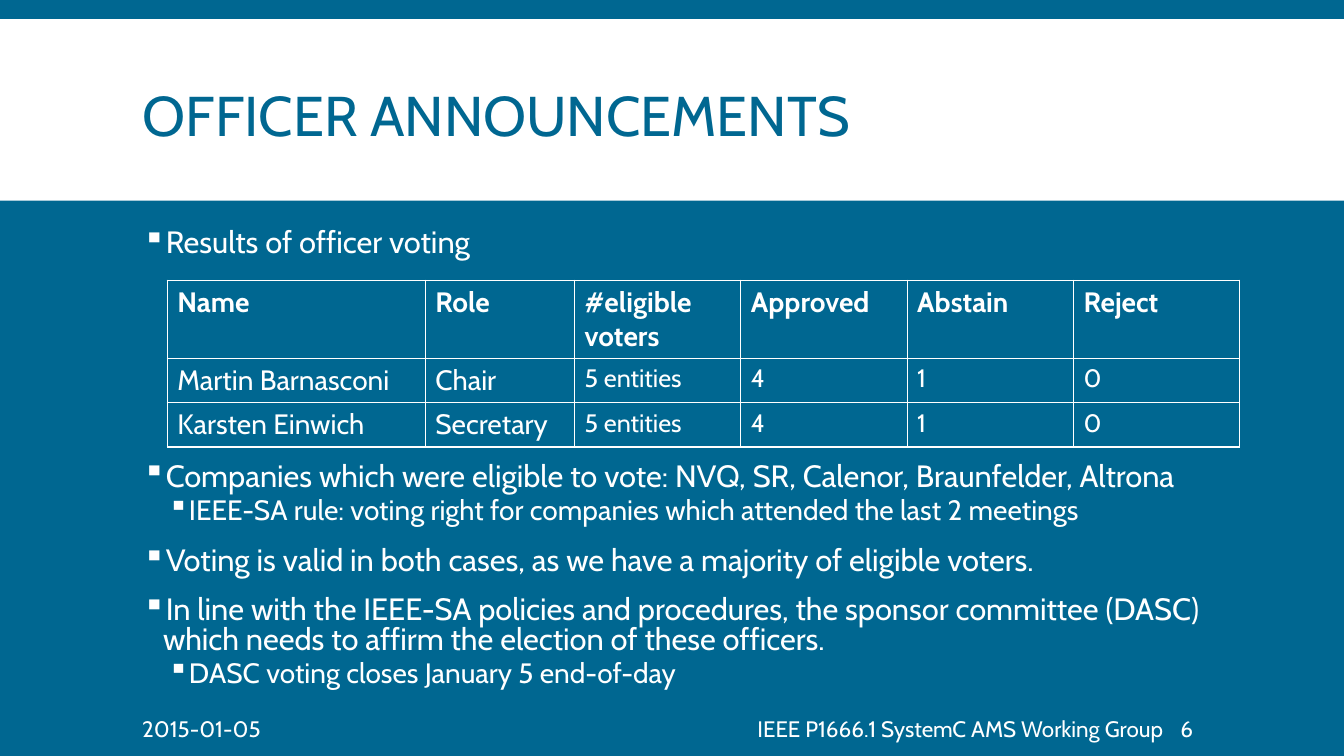
from lxml import etree
from pptx import Presentation
from pptx.dml.color import RGBColor
from pptx.enum.shapes import MSO_SHAPE as Shape
from pptx.enum.text import MSO_ANCHOR as Anchor, PP_ALIGN as Align
from pptx.oxml.ns import qn
from pptx.util import Pt

BLUE, WHITE = "006791", "FFFFFF"


def color(value):
    return RGBColor.from_string(value)


class SlideBuilder:
    font = "Cabin"

    def __init__(self, presentation):
        self.slide = presentation.slides.add_slide(presentation.slide_layouts[6])

    def background(self, fill):
        self.slide.background.fill.solid()
        self.slide.background.fill.fore_color.rgb = color(fill)

    def band(self, left, top, width, height, fill):
        shape = self.slide.shapes.add_shape(
            Shape.RECTANGLE, Pt(left), Pt(top), Pt(width), Pt(height))
        shape.shadow.inherit = False
        shape.fill.solid()
        shape.fill.fore_color.rgb = color(fill)
        shape.line.fill.background()

    def run(self, paragraph, text, size, fill=WHITE, bold=False):
        run = paragraph.add_run()
        run.text = text
        run.font.name = self.font
        run.font.size = Pt(size)
        run.font.bold = bold
        run.font.color.rgb = color(fill)

    def frame(self, left, top, width, height, anchor):
        box = self.slide.shapes.add_textbox(Pt(left), Pt(top), Pt(width), Pt(height))
        frame = box.text_frame
        frame.word_wrap = True
        frame.vertical_anchor = anchor
        return frame

    def label(self, left, top, width, height, text, size, fill=WHITE,
              align=Align.LEFT, margin=7.2):
        frame = self.frame(left, top, width, height, Anchor.MIDDLE)
        frame.margin_left = Pt(margin)
        paragraph = frame.paragraphs[0]
        paragraph.alignment = align
        self.run(paragraph, text, size, fill)

    def bullets(self, left, top, width, height, items, line_spacing):
        frame = self.frame(left, top, width, height, Anchor.TOP)
        for index, (level, text) in enumerate(items):
            paragraph = frame.add_paragraph() if index else frame.paragraphs[0]
            paragraph.level = level
            paragraph.line_spacing = line_spacing
            paragraph.space_before = Pt((2 if level else 12) if index else 0)
            paragraph.space_after = Pt(4 if level else 2)
            properties = paragraph._p.get_or_add_pPr()
            properties.set("marL", str(Pt(32.4 if level else 14.4)))
            properties.set("indent", str(Pt(-14.4)))
            bullet_color = etree.SubElement(properties, qn("a:buClr"))
            etree.SubElement(bullet_color, qn("a:srgbClr"), val=WHITE)
            etree.SubElement(properties, qn("a:buChar"), char="▪")
            self.run(paragraph, text, 20 if level else 22)

    def borders(self, cell, fill):
        properties = cell._tc.get_or_add_tcPr()
        for position, side in enumerate(("lnL", "lnR", "lnT", "lnB")):
            line = etree.Element(qn(f"a:{side}"), w=str(Pt(1)))
            solid = etree.SubElement(line, qn("a:solidFill"))
            etree.SubElement(solid, qn("a:srgbClr"), val=fill)
            properties.insert(position, line)

    def table(self, left, top, widths, heights, rows):
        table = self.slide.shapes.add_table(
            len(rows), len(widths), Pt(left), Pt(top),
            Pt(sum(widths)), Pt(sum(heights))).table
        for column, width in zip(table.columns, widths):
            column.width = Pt(width)
        for row, height in zip(table.rows, heights):
            row.height = Pt(height)
        for row_index, texts in enumerate(rows):
            for column_index, text in enumerate(texts):
                cell = table.cell(row_index, column_index)
                cell.fill.background()
                self.borders(cell, WHITE)
                header = row_index == 0
                size = 20 if header or column_index < 2 else 18
                self.run(cell.text_frame.paragraphs[0], text, size, bold=header)


def main():
    presentation = Presentation()
    presentation.slide_width, presentation.slide_height = Pt(960), Pt(540)
    builder = SlideBuilder(presentation)

    # Background and title
    builder.background(BLUE)
    builder.band(0, 13.7, 960, 129.6, WHITE)
    builder.label(95, 22.3, 770.4, 118.8, "OFFICER ANNOUNCEMENTS", 40, BLUE)

    # Voting results
    builder.bullets(95, 158.4, 770.4, 36, [(0, "Results of officer voting")], 0.9)
    builder.table(119.5, 200.2, [184.3, 106.6] + [118.8] * 4, [55.7, 31.7, 31.7], [
        ["Name", "Role", "#eligible voters", "Approved", "Abstain", "Reject"],
        ["Martin Barnasconi", "Chair", "5 entities", "4", "1", "0"],
        ["Karsten Einwich", "Secretary", "5 entities", "4", "1", "0"],
    ])

    # Voting rules and next steps
    builder.bullets(95, 327.5, 770.4, 172, [
        (0, "Companies which were eligible to vote: NVQ, SR, Calenor, Braunfelder, Altrona"),
        (1, "IEEE-SA rule: voting right for companies which attended the last 2 meetings"),
        (0, "Voting is valid in both cases, as we have a majority of eligible voters."),
        (0, "In line with the IEEE-SA policies and procedures, the sponsor committee (DASC) "
            "which needs to affirm the election of these officers."),
        (1, "DASC voting closes January 5 end-of-day"),
    ], 0.8)

    # Footer
    builder.label(94.5, 505.8, 236, 28.8, "2015-01-05", 16)
    builder.label(440.6, 505.8, 397.4, 28.8,
                  "IEEE P1666.1 SystemC AMS Working Group", 16, align=Align.RIGHT)
    builder.label(839.5, 505.8, 74, 28.8, "6", 16, margin=3.6)

    presentation.save("out.pptx")


if __name__ == "__main__":
    main()
